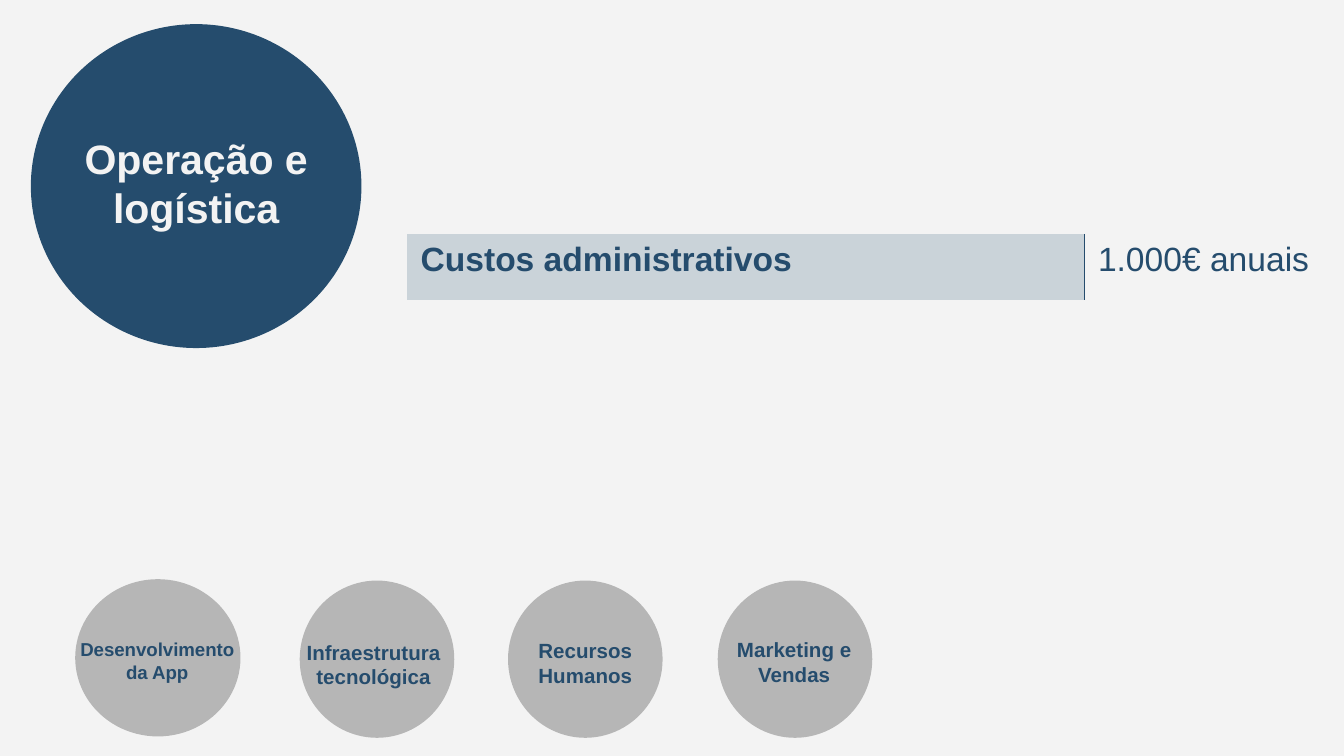
import pptx
import pptx.dml.color
import pptx.enum.shapes
import pptx.enum.text
import pptx.oxml
import pptx.oxml.ns
import pptx.util

Inches = pptx.util.Inches
Pt = pptx.util.Pt
RGBColor = pptx.dml.color.RGBColor

NAVY = RGBColor(0x25, 0x4C, 0x6D)
PALE = RGBColor(0xF3, 0xF3, 0xF3)
GREY = RGBColor(0xB6, 0xB6, 0xB6)
STEEL = RGBColor(0xCA, 0xD3, 0xD9)


def add_circle(left, top, width, height, color):
    circle = page.shapes.add_shape(
        pptx.enum.shapes.MSO_SHAPE.OVAL,
        Inches(left), Inches(top), Inches(width), Inches(height))
    circle.shadow.inherit = False
    circle.fill.solid()
    circle.fill.fore_color.rgb = color
    circle.line.fill.background()


def write_text(frame, text, size, color, bold=True, align=pptx.enum.text.PP_ALIGN.CENTER):
    para = frame.paragraphs[0]
    para.alignment = align
    span = para.add_run()
    span.text = text
    span.font.name = "Arial"
    span.font.size = Pt(size)
    span.font.bold = bold
    span.font.color.rgb = color


deck = pptx.Presentation()
deck.slide_width = Inches(10)
deck.slide_height = Inches(10 * 9 / 16)
page = deck.slides.add_slide(deck.slide_layouts[5])
page.background.fill.solid()
page.background.fill.fore_color.rgb = PALE

# Cost table
table_frame = page.shapes.add_table(1, 2, Inches(3.03), Inches(1.74), Inches(6.97), Inches(0.49))
costs = table_frame.table
costs.first_row = False
costs.horz_banding = False
cost_cells = [("Custos administrativos", 5.04, STEEL, True, "a:lnR"),
              ("1.000€ anuais", 1.93, PALE, False, "a:lnL")]
for column, (text, width, fill, bold, divider) in enumerate(cost_cells):
    costs.columns[column].width = Inches(width)
    cell = costs.cell(0, column)
    write_text(cell.text_frame, text, 18, NAVY, bold, pptx.enum.text.PP_ALIGN.LEFT)
    cell.fill.solid()
    cell.fill.fore_color.rgb = fill
    properties = cell._tc.get_or_add_tcPr()
    for position, side in enumerate(("a:lnL", "a:lnR", "a:lnT", "a:lnB")):
        paint = "<a:noFill/>"
        if side == divider:
            paint = f'<a:solidFill><a:srgbClr val="{NAVY}"/></a:solidFill>'
        properties.insert(position, pptx.oxml.parse_xml(
            f'<{side} {pptx.oxml.ns.nsdecls("a")} w="{Pt(1)}">{paint}</{side}>'))

# Main topic, with the title raised above its circle
add_circle(0.23, 0.18, 2.46, 2.41, NAVY)
title = page.shapes.title
title.left, title.top = Inches(0.1), Inches(0.94)
title.width, title.height = Inches(2.72), Inches(0.84)
title.text_frame.auto_size = pptx.enum.text.MSO_AUTO_SIZE.NONE
title.text_frame.word_wrap = True
title.text_frame.vertical_anchor = pptx.enum.text.MSO_ANCHOR.TOP
write_text(title.text_frame, "Operação e logística", 22, PALE)
page.shapes._spTree.append(title._element)

# Other topics: circle left, top, width; label left, top, width; text size
topics = [
    ("Infraestrutura tecnológica", 2.23, 4.32, 1.15, 2.18, 4.71, 1.2, 11),
    ("Marketing e Vendas", 5.34, 4.32, 1.15, 5.26, 4.69, 1.3, 11),
    ("Desenvolvimento da App", 0.56, 4.31, 1.23, 0.49, 4.7, 1.36, 10),
    ("Recursos Humanos", 3.78, 4.32, 1.15, 3.81, 4.7, 1.09, 11),
]
for text, left, top, width, label_left, label_top, label_width, size in topics:
    add_circle(left, top, width, 1.17, GREY)
    label = page.shapes.add_textbox(
        Inches(label_left), Inches(label_top), Inches(label_width), Inches(0.47))
    label.text_frame.word_wrap = True
    label.text_frame.margin_left = label.text_frame.margin_right = Inches(0.05)
    write_text(label.text_frame, text, size, NAVY)

deck.save("out.pptx")
